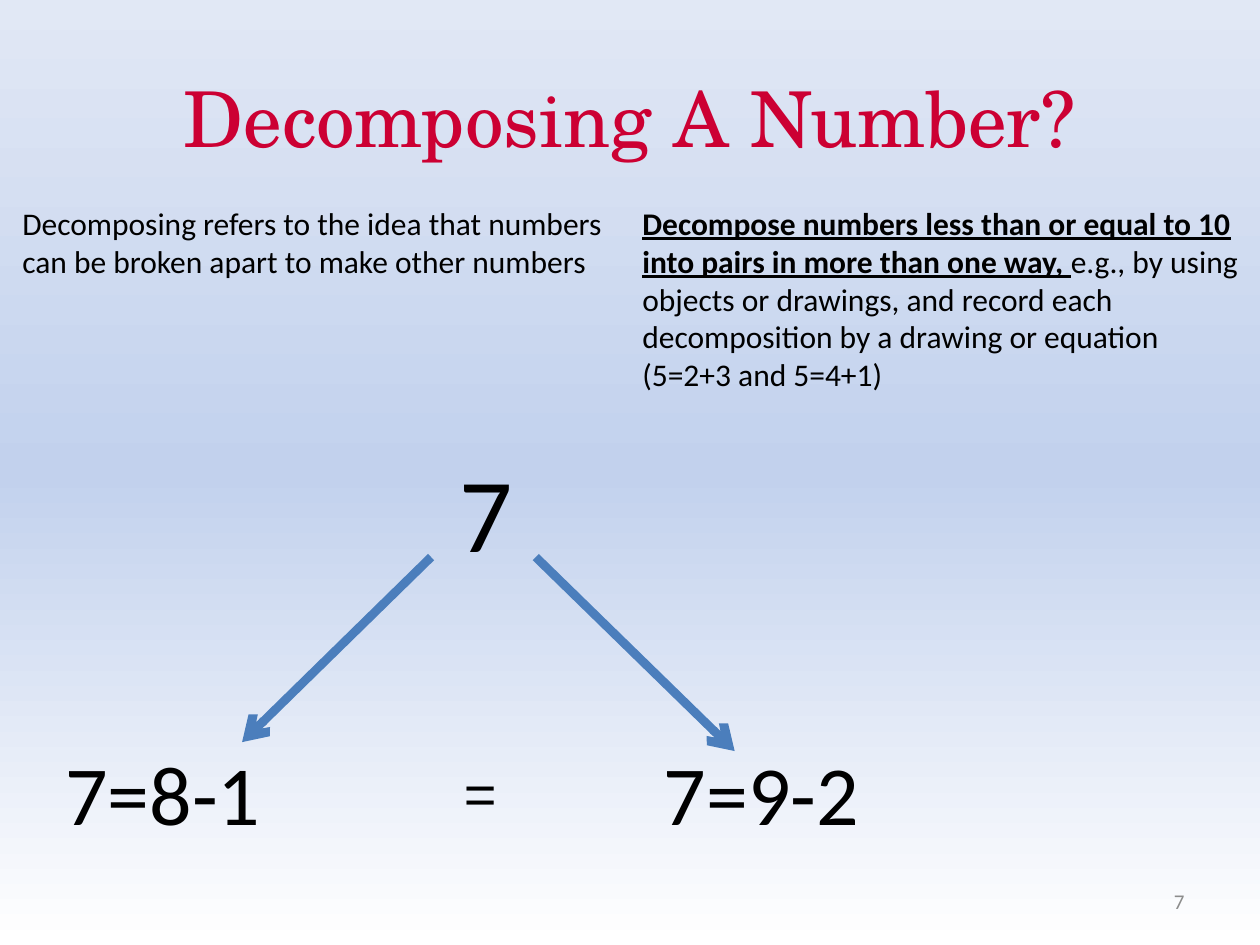
from copy import deepcopy

from lxml.etree import SubElement
from pptx import Presentation
from pptx.dml.color import RGBColor
from pptx.enum.shapes import MSO_CONNECTOR as Connector
from pptx.enum.text import MSO_ANCHOR as Anchor, PP_ALIGN as Align
from pptx.oxml.ns import qn
from pptx.util import Cm, Pt


def colour(value):
    return RGBColor.from_string(value)


class SlideWriter:
    body_font = "Calibri"
    title_font = "TeX Gyre Schola"
    ink, red, grey, blue = "000000", "CC0033", "8C8C8C", "4B7EBC"

    def __init__(self, page):
        self.page = page

    def background(self, stops, angle):
        fill = self.page.background.fill
        fill.gradient()
        first = next(self.page.element.iter(qn("a:gs")))
        for _ in range(len(stops) - len(fill.gradient_stops)):
            first.addnext(deepcopy(first))
        for stop, (position, value) in zip(fill.gradient_stops, stops):
            stop.position = position
            stop.color.rgb = colour(value)
        fill.gradient_angle = angle

    def text(self, place, spans, size, font=body_font, ink=ink,
             align=Align.LEFT, anchor=Anchor.TOP, inset=0.25):
        """Spans are (text, emphasised) pairs."""
        box = self.page.shapes.add_textbox(*map(Cm, place))
        frame = box.text_frame
        frame.word_wrap = True
        frame.vertical_anchor = anchor
        frame.margin_left = Cm(inset)
        para = frame.paragraphs[0]
        para.alignment = align
        para.font.size = Pt(size)
        para.font.name = font
        para.font.color.rgb = colour(ink)
        for words, emphasised in spans:
            span = para.add_run()
            span.text = words
            if emphasised:
                span.font.bold = span.font.underline = True

    def arrow(self, start, end):
        line = self.page.shapes.add_connector(
            Connector.STRAIGHT, *map(Cm, start + end))
        line.line.color.rgb = colour(self.blue)
        line.line.width = Pt(5)
        SubElement(line.line._get_or_add_ln(), qn("a:tailEnd"), type="arrow")
        SubElement(line._element.spPr, qn("a:effectLst"))


def main():
    deck = Presentation()
    deck.slide_width, deck.slide_height = Cm(25.4), Cm(19.05)
    slide = SlideWriter(deck.slides.add_slide(deck.slide_layouts[6]))
    slide.background([(0, "FFFFFF"), (0.5, "C2D1ED"), (1, "E1E8F5")], 90)

    # Title
    slide.text((1.27, 0.76, 22.86, 3.18), [("Decomposing A Number?", False)],
               44, slide.title_font, slide.red, Align.CENTER, Anchor.MIDDLE)

    # Definition and standard
    slide.text((0.2, 3.99, 12.7, 2.57), [
        ("Decomposing refers to the idea that numbers can be broken apart "
         "to make other numbers", False)], 18)
    slide.text((12.7, 3.99, 12.7, 4.88), [
        ("Decompose numbers less than or equal to 10 into pairs in more "
         "than one way, ", True),
        ("e.g., by using objects or drawings, and record each decomposition "
         "by a drawing or equation (5=2+3 and 5=4+1)", False)], 18)

    # Number and its two decompositions
    slide.text((8.05, 8.89, 4.65, 2.82), [("7", False)], 60, inset=1.21)
    slide.arrow((8.69, 11.23), (4.88, 14.96))
    slide.arrow((10.8, 11.23), (14.81, 15.14))
    slide.text((1.07, 14.82, 5.28, 2.3), [("7=8-1", False)], 48)
    slide.text((9.1, 15.16, 1.7, 1.63), [("=", False)], 32, "Arial")
    slide.text((13.13, 14.82, 7.47, 2.3), [("7=9-2", False)], 48)

    # Page number
    slide.text((18.2, 17.65, 5.93, 1.02), [("7", False)], 12,
               ink=slide.grey, align=Align.RIGHT, anchor=Anchor.MIDDLE)

    deck.save("out.pptx")


if __name__ == "__main__":
    main()
